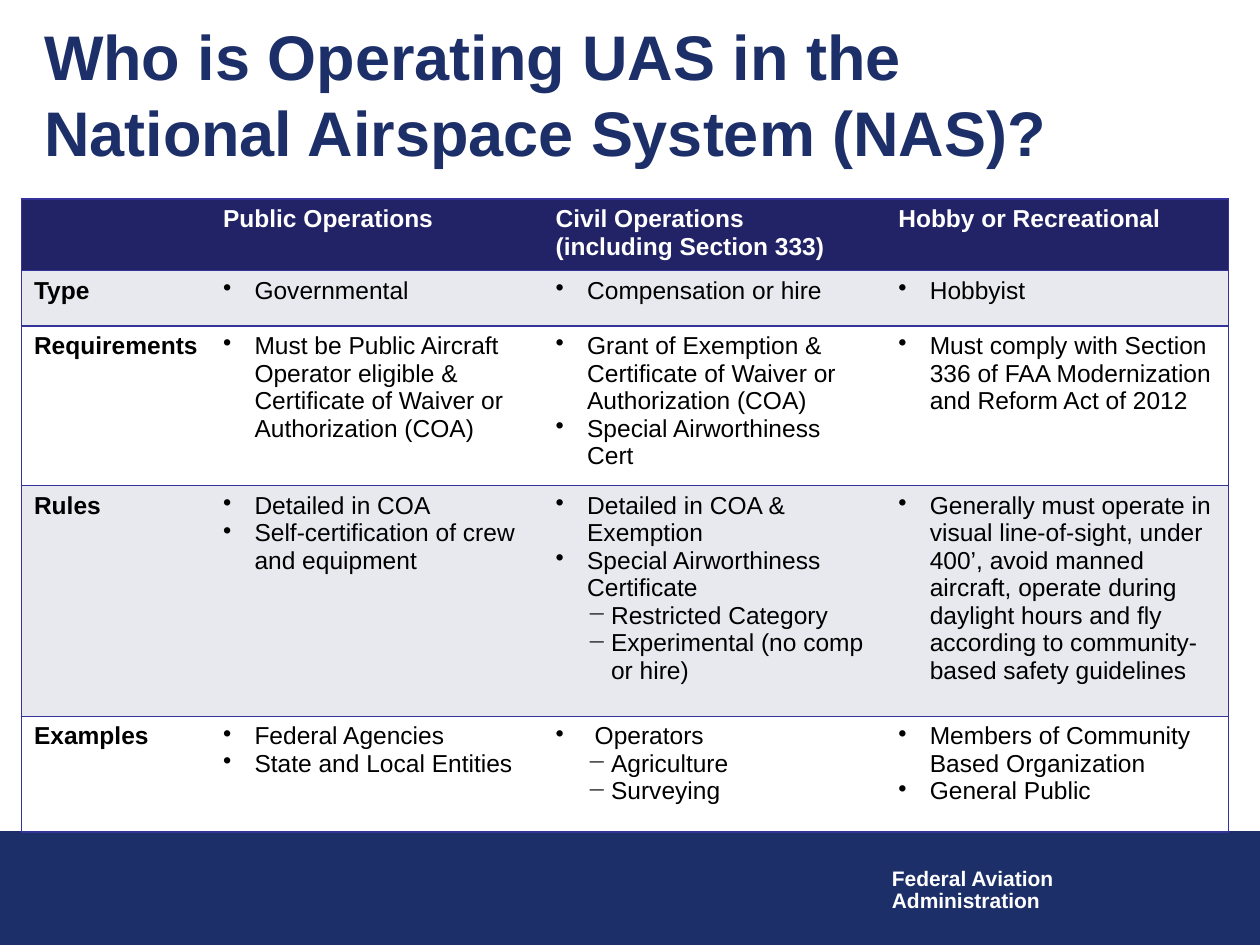
import dataclasses

import pptx
import pptx.dml.color
import pptx.enum.shapes
import pptx.enum.text
import pptx.oxml
import pptx.oxml.ns
import pptx.util

Inches = pptx.util.Inches
Pt = pptx.util.Pt


@dataclasses.dataclass(frozen=True)
class Theme:
    font: str = "Arial"
    navy: str = "1D2F68"
    header: str = "222267"
    border: str = "333399"
    band: str = "E8E8EF"
    white: str = "FFFFFF"
    black: str = "000000"
    title_size: int = 36
    table_size: int = 14
    footer_size: int = 12


THEME = Theme()
WIDTH, HEIGHT = 10, 7.5

# List levels: left margin, hanging indent, bullet, tab stop
LEVELS = {
    "bullet": (0.25, 0.25, "•", None),
    "wide": (0.31, 0.31, "•", None),
    "dash": (0.44, 0.19, "−", 0.44),
}
COLUMNS = [1.5, 2.64, 2.72, 2.72]
ROWS = [0.55, 0.44, 1.17, 1.83, 0.92]

# A cell is a list of paragraphs; a pair names a level other than "bullet"
HEADINGS = [[], ["Public Operations"],
            ["Civil Operations", "(including Section 333)"],
            ["Hobby or Recreational"]]
BODY = [
    ("Type", ["Governmental"], ["Compensation or hire"], ["Hobbyist"]),
    ("Requirements",
     ["Must be Public Aircraft Operator eligible & Certificate of Waiver or Authorization (COA)"],
     ["Grant of Exemption & Certificate of Waiver or Authorization (COA)",
      "Special Airworthiness Cert"],
     ["Must comply with Section 336 of FAA Modernization and Reform Act of 2012"]),
    ("Rules",
     ["Detailed in COA", "Self-certification of crew and equipment"],
     ["Detailed in COA & Exemption", "Special Airworthiness Certificate",
      ("dash", "Restricted Category"), ("dash", "Experimental (no comp or hire)")],
     ["Generally must operate in visual line-of-sight, under 400’, avoid manned aircraft, "
      "operate during daylight hours and fly according to community-based safety guidelines"]),
    ("Examples",
     ["Federal Agencies", "State and Local Entities"],
     [("wide", "Operators"), ("dash", "Agriculture"), ("dash", "Surveying")],
     ["Members of Community Based Organization", "General Public"]),
]


def color(value):
    return pptx.dml.color.RGBColor.from_string(value)


def set_font(para, size, value, bold):
    font = para.font
    font.name, font.size, font.bold = THEME.font, Pt(size), bold
    font.color.rgb = color(value)


def add_element(parent, xml):
    namespace = pptx.oxml.ns.nsdecls("a")
    parent.append(pptx.oxml.parse_xml(xml.replace("XMLNS", namespace)))


def set_bullet(para, level):
    margin, hanging, mark, tab = LEVELS[level]
    props = para._p.get_or_add_pPr()
    props.set("marL", str(Inches(margin)))
    props.set("indent", str(-Inches(hanging)))
    add_element(props, f'<a:buChar XMLNS char="{mark}"/>')
    if tab:
        add_element(props, f'<a:tabLst XMLNS><a:tab pos="{Inches(tab)}" algn="l"/></a:tabLst>')


def set_borders(cell, sides):
    props = cell._tc.get_or_add_tcPr()
    for side in "LRTB":
        paint = (f'<a:solidFill><a:srgbClr val="{THEME.border}"/></a:solidFill>'
                 if side in sides else "<a:noFill/>")
        add_element(props, f'<a:ln{side} XMLNS w="{Pt(1)}">{paint}</a:ln{side}>')


def fill_cell(cell, paragraphs, fill, sides, value, bold, listed):
    set_borders(cell, sides)
    cell.fill.solid()
    cell.fill.fore_color.rgb = color(fill)
    frame = cell.text_frame
    for index, item in enumerate(paragraphs or [""]):
        level, words = item if isinstance(item, tuple) else ("bullet", item)
        para = frame.add_paragraph() if index else frame.paragraphs[0]
        para.text = words
        if listed:
            set_bullet(para, level)
        set_font(para, THEME.table_size, value, bold)


def add_title(page, box):
    title = page.shapes.title
    title.left, title.top, title.width, title.height = map(Inches, box)
    frame = title.text_frame
    frame.word_wrap = True
    frame.auto_size = pptx.enum.text.MSO_AUTO_SIZE.NONE
    frame.vertical_anchor = pptx.enum.text.MSO_ANCHOR.MIDDLE
    para = frame.paragraphs[0]
    para.text = "Who is Operating UAS in the\vNational Airspace System (NAS)?"
    para.alignment = pptx.enum.text.PP_ALIGN.LEFT
    set_font(para, THEME.title_size, THEME.navy, True)


def add_footer(page, box):
    left, top, width, height = box
    # Band
    band = page.shapes.add_shape(pptx.enum.shapes.MSO_SHAPE.RECTANGLE, *map(Inches, box))
    band.shadow.inherit = False
    band.fill.solid()
    band.fill.fore_color.rgb = band.line.color.rgb = color(THEME.navy)
    band.line.width = Pt(0.75)
    # Agency name
    label = page.shapes.add_textbox(Inches(left + 0.698 * width), Inches(top + 0.28 * height),
                                    Inches(0.15 * width), Inches(0.5 * height))
    frame = label.text_frame
    frame.word_wrap = False
    frame.text = "Federal Aviation\nAdministration"
    for para in frame.paragraphs:
        para.line_spacing = 0.85
        set_font(para, THEME.footer_size, THEME.white, True)


def add_operations_table(page, box):
    table = page.shapes.add_table(len(ROWS), len(COLUMNS), *map(Inches, box)).table
    for column, width in zip(table.columns, COLUMNS):
        column.width = Inches(width)
    for row, height in zip(table.rows, ROWS):
        row.height = Inches(height)

    contents = [HEADINGS] + [([name], *cells) for name, *cells in BODY]
    for r, row in enumerate(contents):
        fill = THEME.header if r == 0 else THEME.band if r % 2 else THEME.white
        value = THEME.black if r else THEME.white
        for c, paragraphs in enumerate(row):
            sides = "TB" + ("L" if c == 0 else "R" if c == len(COLUMNS) - 1 else "")
            listed = r > 0 and c > 0
            fill_cell(table.cell(r, c), paragraphs, fill, sides, value, not listed, listed)


def main():
    deck = pptx.Presentation()
    deck.slide_width, deck.slide_height = Inches(WIDTH), Inches(HEIGHT)
    page = deck.slides.add_slide(deck.slide_layouts[5])
    add_footer(page, (0, 0.88 * HEIGHT, WIDTH, 0.12 * HEIGHT))
    add_operations_table(page, (0.17, 1.58, sum(COLUMNS), sum(ROWS)))
    add_title(page, (0.25, 0.31, 9.11, 0.86))
    deck.save("out.pptx")


if __name__ == "__main__":
    main()
